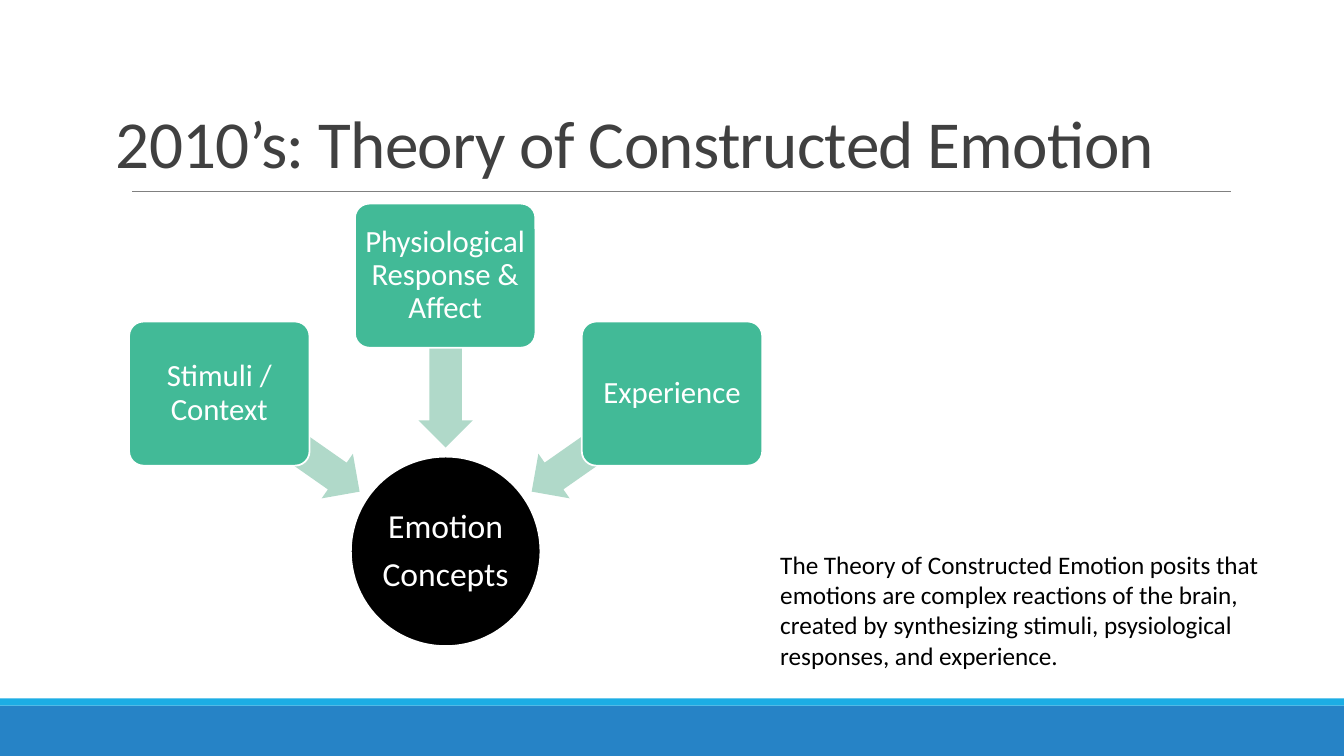
from dataclasses import dataclass

from lxml import etree
from pptx import Presentation, util as u
from pptx.dml.color import RGBColor
from pptx.enum import shapes, text
from pptx.oxml import ns


@dataclass(frozen=True)
class Theme:
    font: str = "Calibri"
    title: str = "404040"
    rule: str = "808080"
    band: str = "2683C6"
    stripe: str = "1CADE4"
    factor: str = "42BA97"
    arrow: str = "B0D9C9"
    black: str = "000000"
    white: str = "FFFFFF"
    title_size: int = 48
    concept_size: int = 24
    factor_size: int = 22
    body_size: int = 18


theme = Theme()
deck = Presentation()
deck.slide_width, deck.slide_height = u.Inches(13.33), u.Inches(7.5)
page = deck.slides.add_slide(deck.slide_layouts[6])


def add_block(kind, left, top, width, height, fill, outline=None):
    block = page.shapes.add_shape(kind, *map(u.Inches, (left, top, width, height)))
    block.shadow.inherit = False
    block.fill.solid()
    block.fill.fore_color.rgb = RGBColor.from_string(fill)
    if outline:
        block.line.color.rgb = RGBColor.from_string(outline)
        block.line.width = u.Pt(1.25)
    else:
        block.line.fill.background()
    return block


def write(box, content, *, size, color, align=text.PP_ALIGN.LEFT, anchor=text.MSO_ANCHOR.TOP,
          line_spacing=1.0, gap=0, inset=None, tracking=None):
    frame = box.text_frame
    frame.word_wrap = True
    frame.vertical_anchor = anchor
    if inset is not None:
        frame.margin_left = frame.margin_right = u.Inches(inset)
        frame.margin_top = frame.margin_bottom = u.Inches(inset)
    for index, line in enumerate(content.split("\n")):
        para = frame.add_paragraph() if index else frame.paragraphs[0]
        para.alignment = align
        para.line_spacing = line_spacing
        para.space_before = u.Pt(gap if index else 0)
        span = para.add_run()
        span.text = line
        span.font.name = theme.font
        span.font.size = u.Pt(size)
        span.font.color.rgb = RGBColor.from_string(color)
        if tracking is not None:
            span._r.get_or_add_rPr().set("spc", str(round(tracking * 100)))


add_block(shapes.MSO_SHAPE.RECTANGLE, 0, 7, 13.33, 0.5, theme.band)
add_block(shapes.MSO_SHAPE.RECTANGLE, 0, 6.93, 13.33, 0.07, theme.stripe)

rule = page.shapes.add_connector(shapes.MSO_CONNECTOR.STRAIGHT, u.Inches(1.31), u.Inches(1.9),
                                 u.Inches(12.21), u.Inches(1.9))
rule.line.color.rgb = RGBColor.from_string(theme.rule)
rule.line.width = u.Pt(0.5)
etree.SubElement(rule._element.spPr, ns.qn("a:effectLst"))

title = page.shapes.add_textbox(u.Inches(1.05), u.Inches(0.41), u.Inches(11.5), u.Inches(1.45))
write(title, "2010’s: Theory of Constructed Emotion", size=theme.title_size, color=theme.title,
      anchor=text.MSO_ANCHOR.BOTTOM, line_spacing=0.85, tracking=-0.5)

centered = dict(color=theme.white, align=text.PP_ALIGN.CENTER,
                anchor=text.MSO_ANCHOR.MIDDLE, line_spacing=0.9)
concepts = add_block(shapes.MSO_SHAPE.OVAL, 3.48, 4.53, 1.88, 1.88, theme.black, theme.white)
write(concepts, "Emotion\nConcepts", size=theme.concept_size, gap=8.4, inset=0.02, **centered)

factors = [
    ("Stimuli / Context", 1.28, 3.19, 2.02, 4.12, 215),
    ("Physiological Response & Affect", 3.52, 2.02, 3.57, 3.32, 270),
    ("Experience", 5.77, 3.19, 5.12, 4.12, 325),
]
for label, left, top, arrow_left, arrow_top, angle in factors:
    arrow = add_block(shapes.MSO_SHAPE.LEFT_ARROW, arrow_left, arrow_top, 1.7, 0.54, theme.arrow)
    arrow.adjustments[0], arrow.adjustments[1] = 0.6, 0.5
    arrow.rotation = angle
    factor = add_block(shapes.MSO_SHAPE.ROUNDED_RECTANGLE, left, top, 1.79, 1.43,
                       theme.factor, theme.white)
    factor.adjustments[0] = 0.1
    write(factor, label, size=theme.factor_size, inset=0.05, **centered)

summary = page.shapes.add_textbox(u.Inches(7.64), u.Inches(5.4), u.Inches(5.08), u.Inches(1.31))
write(summary, "The Theory of Constructed Emotion posits that emotions are complex reactions of "
      "the brain, created by synthesizing stimuli, psysiological responses, and experience.",
      size=theme.body_size, color=theme.black)
summary.text_frame.auto_size = text.MSO_AUTO_SIZE.SHAPE_TO_FIT_TEXT

deck.save("out.pptx")
